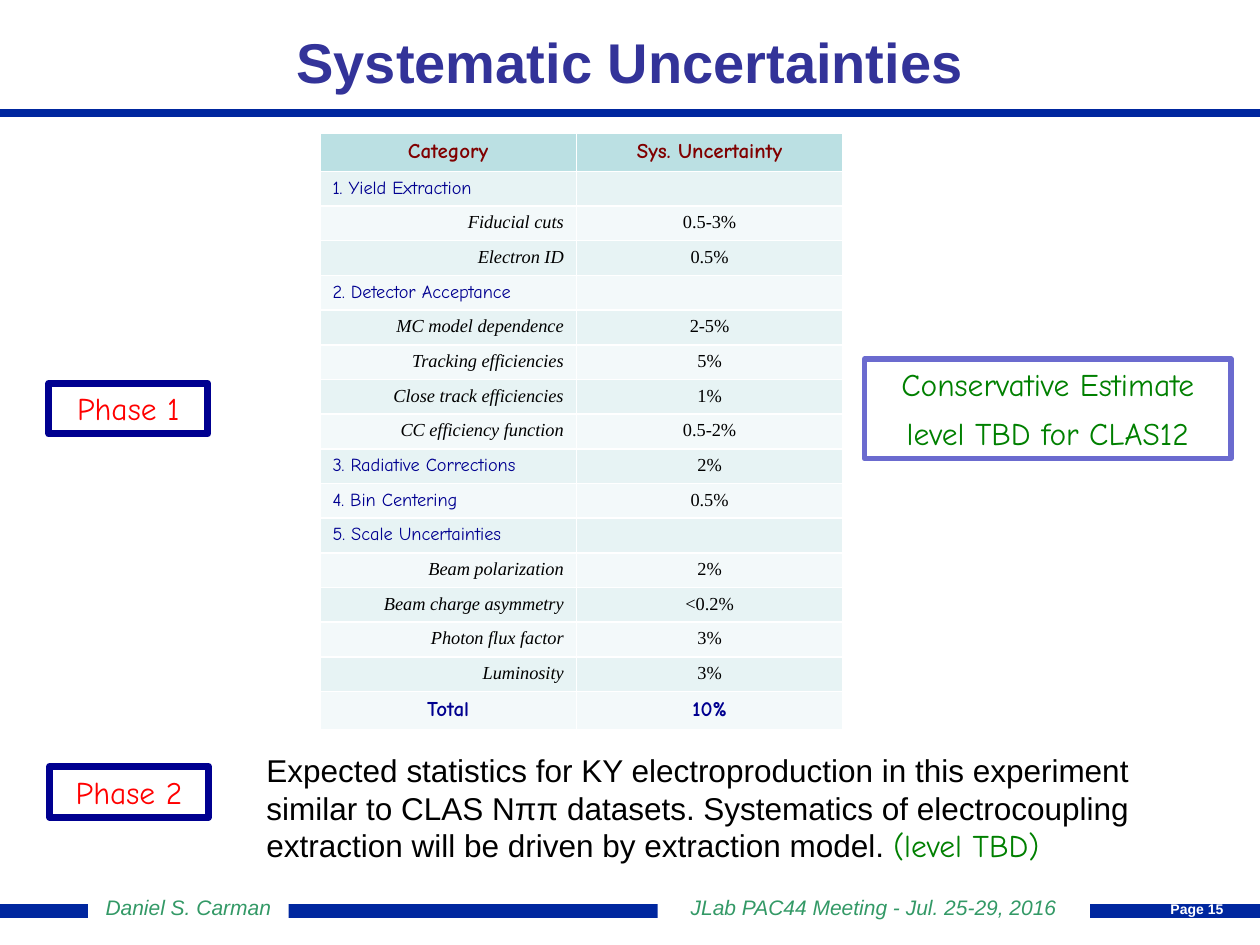
"""Build the slide on systematic uncertainties."""
from dataclasses import dataclass

from lxml import etree
from pptx import Presentation
from pptx.dml.color import RGBColor as Color
from pptx.enum.shapes import MSO_CONNECTOR as Connector, MSO_SHAPE as Shape
from pptx.enum.text import MSO_ANCHOR as Anchor, PP_ALIGN as Align
from pptx.oxml.ns import qn
from pptx.util import Pt


@dataclass(frozen=True)
class Theme:
    sans: str = "Arial"
    hand: str = "Comic Neue"
    serif: str = "Times New Roman"
    white: str = "FFFFFF"
    black: str = "000000"
    rule: str = "00279F"
    title: str = "333399"
    footer: str = "339966"
    navy: str = "000090"
    red: str = "FF0000"
    green: str = "008000"
    maroon: str = "800000"
    violet: str = "6B6BCF"
    header: str = "BBE0E3"
    bands: tuple = ("E7F3F4", "F3F9FA")
    title_size: float = 32
    body_size: float = 18
    head_size: float = 12
    cell_size: float = 10.5
    page_size: float = 8


theme = Theme()


def add_span(para, text, font, size, color, bold=False, italic=False):
    span = para.add_run()
    span.text = text
    span.font.name = font
    span.font.size = Pt(size)
    span.font.color.rgb = Color.from_string(color)
    span.font.bold = bold
    span.font.italic = italic


def add_box(page, left, top, width, height, fill=None, line=None, weight=0):
    box = page.shapes.add_shape(Shape.RECTANGLE, Pt(left), Pt(top), Pt(width), Pt(height))
    box.shadow.inherit = False
    if fill:
        box.fill.solid()
        box.fill.fore_color.rgb = Color.from_string(fill)
    else:
        box.fill.background()
    if line:
        box.line.color.rgb = Color.from_string(line)
        box.line.width = Pt(weight)
    else:
        box.line.fill.background()
    box.text_frame.word_wrap = True
    box.text_frame.vertical_anchor = Anchor.TOP
    return box


deck = Presentation()
deck.slide_width, deck.slide_height = Pt(720), Pt(540)
page = deck.slides.add_slide(deck.slide_layouts[5])

title = page.shapes.title
title.left, title.top, title.width, title.height = Pt(0), Pt(10), Pt(720), Pt(50.4)
title.text_frame.vertical_anchor = Anchor.MIDDLE
para = title.text_frame.paragraphs[0]
para.alignment = Align.CENTER
add_span(para, "Systematic Uncertainties", theme.sans, theme.title_size, theme.title, bold=True)

for y, weight in ((64.8, 4.5), (520.5, 8)):
    rule = page.shapes.add_connector(Connector.STRAIGHT, Pt(0), Pt(y), Pt(720), Pt(y))
    rule.line.color.rgb = Color.from_string(theme.rule)
    rule.line.width = Pt(weight)
    etree.SubElement(rule._element.spPr, qn("a:effectLst"))

for text, left, width, height in (
    ("Daniel S. Carman", 50.4, 114.5, 21.6),
    ("JLab PAC44 Meeting - Jul. 25-29, 2016", 375.8, 247, 31.7),
):
    footer = add_box(page, left, 504.7, width, height, fill=theme.white)
    frame = footer.text_frame
    frame.margin_left = frame.margin_right = frame.margin_bottom = Pt(0)
    frame.margin_top = Pt(9)
    para = frame.paragraphs[0]
    para.alignment = Align.CENTER
    para.line_spacing = 0.8
    add_span(para, text, theme.sans, theme.head_size, theme.footer, italic=True)

number = page.shapes.add_textbox(Pt(668.2), Pt(514.8), Pt(31.7), Pt(9.4))
frame = number.text_frame
frame.word_wrap = False
frame.margin_left = frame.margin_right = frame.margin_top = frame.margin_bottom = Pt(0)
para = frame.paragraphs[0]
para.alignment = Align.CENTER
add_span(para, "Page 15", theme.sans, theme.page_size, theme.white, bold=True)

for lines, left, top, width, height, color, border, weight in (
    (["Phase 1"], 28, 219, 90.7, 29, theme.red, theme.navy, 4),
    (["Phase 2"], 28.4, 438, 90.7, 29, theme.red, theme.navy, 4),
    (["Conservative Estimate", "level TBD for CLAS12"],
     494, 205.2, 209.5, 56.9, theme.green, theme.violet, 3),
):
    label = add_box(page, left, top, width, height, line=border, weight=weight)
    for index, text in enumerate(lines):
        frame = label.text_frame
        para = frame.add_paragraph() if index else frame.paragraphs[0]
        para.alignment = Align.CENTER
        para.space_after = Pt(6)
        add_span(para, text, theme.hand, theme.body_size, color)

outlook = page.shapes.add_textbox(Pt(145.2), Pt(425.5), Pt(527), Pt(72.7))
outlook.text_frame.word_wrap = True
para = outlook.text_frame.paragraphs[0]
para.space_after = Pt(6)
add_span(
    para,
    "Expected statistics for KY electroproduction in this experiment similar to CLAS Nππ "
    "datasets. Systematics of electrocoupling extraction will be driven by extraction model. ",
    theme.sans, theme.body_size, theme.black,
)
add_span(para, "(level TBD)", theme.hand, theme.body_size, theme.green)

rows = (
    ("head", "Category", "Sys. Uncertainty"),
    ("group", "1. Yield Extraction", ""),
    ("item", "Fiducial cuts", "0.5-3%"),
    ("item", "Electron ID", "0.5%"),
    ("group", "2. Detector Acceptance", ""),
    ("item", "MC model dependence", "2-5%"),
    ("item", "Tracking efficiencies", "5%"),
    ("item", "Close track efficiencies", "1%"),
    ("item", "CC efficiency function", "0.5-2%"),
    ("group", "3. Radiative Corrections", "2%"),
    ("group", "4. Bin Centering", "0.5%"),
    ("group", "5. Scale Uncertainties", ""),
    ("item", "Beam polarization", "2%"),
    ("item", "Beam charge asymmetry", "<0.2%"),
    ("item", "Photon flux factor", "3%"),
    ("item", "Luminosity", "3%"),
    ("total", "Total", "10%"),
)
heights = {"head": 21.6, "group": 19.8, "item": 19.8, "total": 21.2}
head = (Align.CENTER, theme.hand, theme.head_size, theme.maroon, True, False)
total = (Align.CENTER, theme.hand, theme.head_size, theme.navy, True, False)
group = (Align.LEFT, theme.hand, theme.cell_size, theme.navy, False, False)
item = (Align.RIGHT, theme.serif, theme.cell_size, theme.black, False, True)
value = (Align.CENTER, theme.serif, theme.cell_size, theme.black, False, False)
styles = {"head": (head, head), "group": (group, value),
          "item": (item, value), "total": (total, total)}

holder = page.shapes.add_table(
    len(rows), 2, Pt(182.8), Pt(76.3), Pt(298.8), Pt(sum(heights[row[0]] for row in rows))
)
table = holder.table
table.columns[0].width, table.columns[1].width = Pt(146.6), Pt(152.2)
for index, (kind, *texts) in enumerate(rows):
    table.rows[index].height = Pt(heights[kind])
    fill = theme.bands[(index - 1) % 2] if index else theme.header
    for column, text in enumerate(texts):
        cell = table.cell(index, column)
        cell.fill.solid()
        cell.fill.fore_color.rgb = Color.from_string(fill)
        align, *look = styles[kind][column]
        para = cell.text_frame.paragraphs[0]
        para.alignment = align
        if text:
            add_span(para, text, *look)
        else:
            etree.SubElement(para._p, qn("a:endParaRPr"), sz=str(int(theme.cell_size * 100)))

deck.save("out.pptx")
